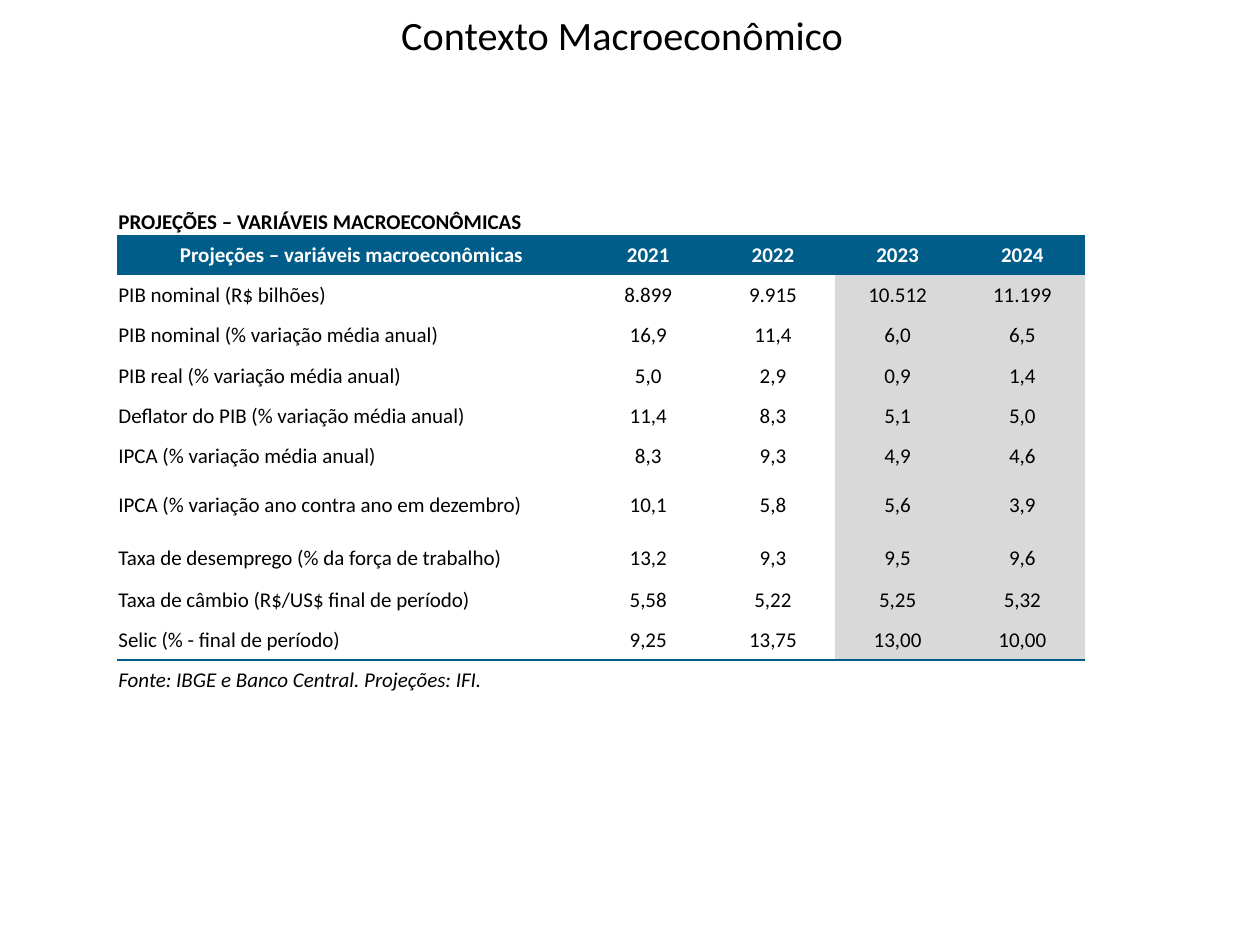
from lxml.etree import SubElement
from pptx import Presentation
from pptx.dml.color import RGBColor
from pptx.enum.text import MSO_ANCHOR as Anchor, PP_ALIGN as Align
from pptx.oxml import parse_xml
from pptx.oxml.ns import nsdecls, qn
from pptx.util import Inches, Pt

TITLE = "Contexto Macroeconômico"
CAPTION = "PROJEÇÕES – VARIÁVEIS MACROECONÔMICAS"
SOURCE = "Fonte: IBGE e Banco Central. Projeções: IFI."
HEADER = ("Projeções – variáveis macroeconômicas", "2021", "2022", "2023", "2024")
INDICATORS = [
    ("PIB nominal (R$ bilhões)", "8.899", "9.915", "10.512", "11.199"),
    ("PIB nominal (% variação média anual)", "16,9", "11,4", "6,0", "6,5"),
    ("PIB real (% variação média anual)", "5,0", "2,9", "0,9", "1,4"),
    ("Deflator do PIB (% variação média anual)", "11,4", "8,3", "5,1", "5,0"),
    ("IPCA (% variação média anual)", "8,3", "9,3", "4,9", "4,6"),
    ("IPCA (% variação ano contra ano em dezembro)", "10,1", "5,8", "5,6", "3,9"),
    ("Taxa de desemprego (% da força de trabalho)", "13,2", "9,3", "9,5", "9,6"),
    ("Taxa de câmbio (R$/US$ final de período)", "5,58", "5,22", "5,25", "5,32"),
    ("Selic (% - final de período)", "9,25", "13,75", "13,00", "10,00"),
]
BLUE, GREY, WHITE, BLACK = "005D89", "D9D9D9", "FFFFFF", "000000"
COLUMN_WIDTHS = [3.72] + [0.99] * 4
ROW_HEIGHTS = [0.32, 0.31] + [0.32] * 5 + [0.46, 0.37, 0.31, 0.32, 0.32]
FIRST_FORECAST = 3
NO_STYLE = "{2D5ABB26-0587-4C30-8999-92F81FD0307C}"

rows = [(CAPTION, "", "", "", ""), HEADER, *INDICATORS, (SOURCE, "", "", "", "")]
CAPTION_ROW, HEADER_ROW, SOURCE_ROW = 0, 1, len(rows) - 1
RULES = {CAPTION_ROW: 1, SOURCE_ROW - 1: 1.5}  # row above the line: width


def color(value):
    return RGBColor.from_string(value)


def style(para, size, text_color=BLACK, bold=False, italic=False, align=Align.LEFT):
    para.alignment = align
    font = para.font
    font.name, font.size, font.bold, font.italic = "Calibri", Pt(size), bold, italic
    font.color.rgb = color(text_color)


def add_border(cell, side, width):
    """Add a blue line; must run before the fill is set, top before bottom."""
    line = parse_xml(f'<a:{side} {nsdecls("a")} w="{Pt(width)}"/>')
    fill = SubElement(line, qn("a:solidFill"))
    SubElement(fill, qn("a:srgbClr"), val=BLUE)
    cell._tc.get_or_add_tcPr().append(line)


def fill_cell(cell, text, row, column):
    cell.margin_left = cell.margin_right = cell.margin_top = Inches(0.01)
    cell.margin_bottom = 0
    cell.vertical_anchor = Anchor.BOTTOM if row == CAPTION_ROW else Anchor.MIDDLE
    if row - 1 in RULES:
        add_border(cell, "lnT", RULES[row - 1])
    if row in RULES:
        add_border(cell, "lnB", RULES[row])

    is_header = row == HEADER_ROW
    is_forecast = HEADER_ROW < row < SOURCE_ROW and column >= FIRST_FORECAST
    cell.fill.solid()
    cell.fill.fore_color.rgb = color(BLUE if is_header else GREY if is_forecast else WHITE)

    if row == SOURCE_ROW:
        align = Align.JUSTIFY
    else:
        align = Align.CENTER if is_header or column > 0 else Align.LEFT
    cell.text = text
    style(cell.text_frame.paragraphs[0], 12, WHITE if is_header else BLACK,
          row <= HEADER_ROW, row == SOURCE_ROW, align)


def add_title(page):
    box = page.shapes.add_textbox(Inches(2.96), 0, Inches(3.96), Inches(0.59))
    frame = box.text_frame
    frame.word_wrap = True
    frame.vertical_anchor = Anchor.MIDDLE
    para = frame.paragraphs[0]
    para.text = TITLE
    para.line_spacing = 0.9
    style(para, 23, align=Align.CENTER)


def add_projections(page):
    table = page.shapes.add_table(
        len(rows), len(HEADER), Inches(0.93), Inches(1.55),
        Inches(sum(COLUMN_WIDTHS)), Inches(sum(ROW_HEIGHTS))).table
    table.first_row = table.horz_banding = False
    table._tbl.tblPr.find(qn("a:tableStyleId")).text = NO_STYLE
    for column, width in zip(table.columns, COLUMN_WIDTHS):
        column.width = Inches(width)
    for row, height in zip(table.rows, ROW_HEIGHTS):
        row.height = Inches(height)
    for r, values in enumerate(rows):
        for c, text in enumerate(values):
            fill_cell(table.cell(r, c), text, r, c)
    table.cell(CAPTION_ROW, 0).merge(table.cell(CAPTION_ROW, len(HEADER) - 1))


def main():
    deck = Presentation()
    deck.slide_width, deck.slide_height = Inches(10), Inches(7.5)
    page = deck.slides.add_slide(deck.slide_layouts[6])
    add_title(page)
    add_projections(page)
    deck.save("out.pptx")


if __name__ == "__main__":
    main()
